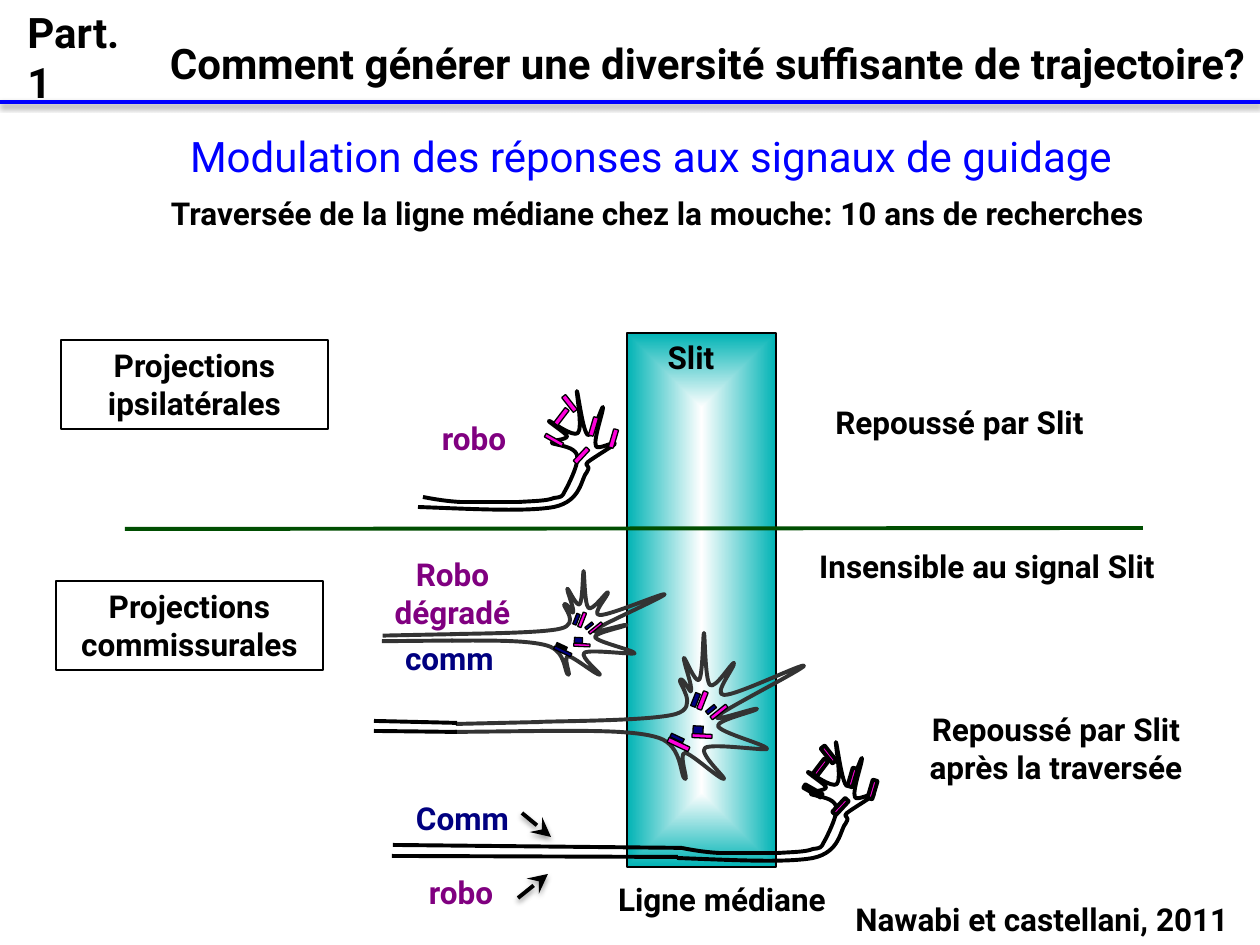
from lxml import etree
from pptx import Presentation
from pptx.dml.color import RGBColor
from pptx.enum.shapes import MSO_CONNECTOR, MSO_SHAPE
from pptx.enum.text import MSO_ANCHOR, PP_ALIGN
from pptx.oxml import parse_xml
from pptx.oxml.ns import qn
from pptx.util import Emu, Pt

RECTANGLE = MSO_SHAPE.RECTANGLE
ROUNDED = MSO_SHAPE.ROUNDED_RECTANGLE
STRAIGHT = MSO_CONNECTOR.STRAIGHT
TOP = MSO_ANCHOR.TOP
LEFT, CENTER = PP_ALIGN.LEFT, PP_ALIGN.CENTER

SCALE = 914400 / 126
FONT = "Roboto"
BLACK, GREY, BLUE, NAVY = "000000", "333333", "0000FF", "000080"
PURPLE, PINK, GREEN, TEAL = "800080", "FF00DB", "004E01", "00B3B5"

TURNING_CONE = [
    (0, 116),
    (54, 118), (108, 121), (136, 116), (164, 110), (163, 87), (169, 81),
    (174, 73), (165, 76), (170, 71), (175, 67), (195, 55), (197, 53),
    (198, 49), (179, 60), (178, 55), (175, 49), (186, 19), (185, 16),
    (184, 15), (174, 47), (170, 44), (165, 42), (160, 1), (159, 0),
    (158, 0), (165, 37), (160, 42), (155, 47), (132, 29), (131, 30),
    (129, 30), (149, 43), (149, 45), (150, 49), (132, 49), (134, 52),
    (134, 53), (150, 55), (155, 59), (159, 62), (160, 64), (159, 71),
    (158, 78), (151, 93), (147, 100), (144, 106), (144, 106), (136, 107),
    (129, 110), (116, 110), (101, 111), (84, 111), (58, 111), (42, 111),
    (25, 110), (10, 107), (5, 106),
]
TURNING_RECEPTORS = [
    (173, 26, 5, 19, 196.4), (193, 38, 5, 19, 196.4), (161, 55, 5, 19, 222.9),
    (134, 39, 4, 20, 119.4), (149, 3, 5, 19, 141.8), (141, 16, 5, 19, 217.3),
]
CROSSING_CONE = [
    (1, 98),
    (48, 98), (96, 97), (120, 105), (144, 113), (141, 144), (146, 146),
    (150, 149), (139, 120), (146, 120), (152, 120), (181, 147), (185, 146),
    (188, 146), (159, 120), (166, 115), (173, 110), (226, 118), (228, 116),
    (229, 112), (181, 100), (179, 93), (178, 87), (218, 78), (218, 76),
    (217, 74), (170, 91), (179, 83), (186, 76), (263, 37), (265, 33),
    (266, 29), (197, 63), (185, 62), (173, 62), (197, 33), (195, 30),
    (193, 29), (176, 57), (171, 52), (166, 47), (166, 1), (165, 0),
    (164, 0), (164, 43), (160, 47), (156, 50), (146, 24), (145, 25),
    (144, 28), (154, 54), (152, 58), (152, 62), (144, 43), (141, 47),
    (139, 50), (161, 74), (137, 81), (113, 88), (23, 88), (0, 89),
]
CROSSING_TAILS = [((4, 98), (-84, 99)), ((3, 89), (-83, 91))]
CROSSING_RECEPTORS = [
    ((170, 71, 4, 11), (178, 69, 4, 20), 51.1),
    ((154, 60, 5, 14), (161, 58, 5, 19), 21.4),
    ((155, 92, 8, 10), (161, 93, 4, 20), 92.7),
    ((136, 98, 4, 14), (137, 100, 5, 23), 115.1),
]


def px(value):
    return Emu(round(value * SCALE))


def rgb(color):
    return RGBColor.from_string(color)


def style_line(shape, color, width):
    shape.line.color.rgb = rgb(color)
    shape.line.width = Pt(width)


def write_text(shape, lines, color=BLACK, size=18, bold=True, align=CENTER):
    frame = shape.text_frame
    frame.word_wrap = True
    frame.vertical_anchor = TOP
    for index, line in enumerate(lines):
        paragraph = frame.add_paragraph() if index else frame.paragraphs[0]
        paragraph.alignment = align
        run = paragraph.add_run()
        run.text = line
        run.font.name = FONT
        run.font.size = Pt(size)
        run.font.bold = bold
        run.font.color.rgb = rgb(color)


def add_label(slide, box, *lines, **style):
    write_text(slide.shapes.add_textbox(*map(px, box)), lines, **style)


def add_block(shapes, kind, box, fill=None, line_width=0.75, rotation=0):
    shape = shapes.add_shape(kind, *map(px, box))
    shape.shadow.inherit = False
    shape.rotation = rotation
    style_line(shape, BLACK, line_width)
    if fill:
        shape.fill.solid()
        shape.fill.fore_color.rgb = rgb(fill)
    else:
        shape.fill.background()
    return shape


def add_line(slide, start_x, start_y, end_x, end_y, color=BLACK, width=2.25,
             arrow=False, shadow=False):
    ends = map(px, (start_x, start_y, end_x, end_y))
    connector = slide.shapes.add_connector(STRAIGHT, *ends)
    style_line(connector, color, width)
    if arrow:
        outline = connector.line._get_or_add_ln()
        etree.SubElement(outline, qn("a:tailEnd"), type="stealth",
                         w="lg", len="lg")
    properties = connector._element.spPr
    effects = etree.SubElement(properties, qn("a:effectLst"))
    if shadow:
        outer = etree.SubElement(effects, qn("a:outerShdw"), blurRad="40000",
                                 dist="20000", dir="5400000", rotWithShape="0")
        tint = etree.SubElement(outer, qn("a:srgbClr"), val=BLACK)
        etree.SubElement(tint, qn("a:alpha"), val="38000")


def add_curve(shapes, points, color):
    builder = shapes.build_freeform(*map(px, points[0]))
    builder.add_line_segments([(px(x), px(y)) for x, y in points[1:]], close=False)
    curve = builder.convert_to_shape()
    segments = list(curve._element.iter(qn("a:lnTo")))
    outline = segments[0].getparent()
    for index in range(0, len(segments), 3):
        bezier = etree.SubElement(outline, qn("a:cubicBezTo"))
        for segment in segments[index:index + 3]:
            bezier.append(segment[0])
            outline.remove(segment)
    curve.shadow.inherit = False
    curve.fill.background()
    style_line(curve, color, 2.25)


def add_axon(shapes, start, end, color):
    points = [tuple(a + (b - a) * step / 3 for a, b in zip(start, end))
              for step in range(4)]
    add_curve(shapes, points, color)


def add_turning_cone(shapes, left, top, receptor_line):
    add_curve(shapes, [(left + x, top + y) for x, y in TURNING_CONE], BLACK)
    for x, y, width, height, rotation in TURNING_RECEPTORS:
        add_block(shapes, ROUNDED, (left + x, top + y, width, height), PINK,
                  receptor_line, rotation)


def add_crossing_cone(slide, left, top, scale_x=1, scale_y=1,
                      last_colors=(NAVY, PINK)):
    def place(x, y):
        return left + x * scale_x, top + y * scale_y

    group = slide.shapes.add_group_shape()
    add_curve(group.shapes, [place(x, y) for x, y in CROSSING_CONE], GREY)
    for start, end in CROSSING_TAILS:
        add_axon(group.shapes, place(*start), place(*end), GREY)
    colors = [(NAVY, PINK)] * 3 + [last_colors]
    for (comm, robo, rotation), fills in zip(CROSSING_RECEPTORS, colors):
        for kind, box, fill in zip((RECTANGLE, ROUNDED), (comm, robo), fills):
            x, y, width, height = box
            add_block(slide.shapes, kind,
                      (*place(x, y), width * scale_y, height * scale_x),
                      fill, rotation=rotation)


def add_midline(slide):
    band = add_block(slide.shapes, RECTANGLE, (627, 333, 149, 534))
    gradient = parse_xml(
        '<a:gradFill xmlns:a="http://schemas.openxmlformats.org/drawingml/2006/main"'
        ' rotWithShape="1"><a:gsLst>'
        '<a:gs pos="0"><a:srgbClr val="FFFFFF"/></a:gs>'
        f'<a:gs pos="100000"><a:srgbClr val="{TEAL}"/></a:gs></a:gsLst>'
        '<a:path path="shape"><a:fillToRect l="50000" t="50000" r="50000"'
        ' b="50000"/></a:path></a:gradFill>')
    properties = band._element.spPr
    properties.replace(properties.find(qn("a:noFill")), gradient)


def add_header(slide):
    title = slide.shapes.title
    title.left, title.top, title.width, title.height = map(px, (155, 31, 1105, 64))
    write_text(title, ["Comment générer une diversité suffisante de trajectoire?"],
               size=24)
    add_label(slide, (15, 0, 140, 64), "Part. 1", size=24, align=LEFT)
    add_line(slide, 0, 102, 1260, 102, BLUE, 2, shadow=True)
    add_label(slide, (142, 124, 1018, 63),
              "Modulation des réponses aux signaux de guidage",
              color=BLUE, size=24, bold=False)
    add_label(slide, (155, 188, 1005, 50),
              "Traversée de la ligne médiane chez la mouche: 10 ans de recherches")


def main():
    presentation = Presentation()
    presentation.slide_width, presentation.slide_height = px(1260), px(945)
    slide = presentation.slides.add_slide(presentation.slide_layouts[5])
    add_header(slide)
    add_midline(slide)
    add_crossing_cone(slide, 539, 633)
    add_turning_cone(slide.shapes, 418, 391, 0.75)
    add_turning_cone(slide.shapes.add_group_shape().shapes, 677, 742, 2.25)
    add_crossing_cone(slide, 450, 571, 0.81, 0.71, (BLACK, NAVY))
    add_axon(slide.shapes, (682, 848), (393, 845), BLACK)
    add_axon(slide.shapes, (678, 857), (392, 856), BLACK)
    axon = slide.shapes.add_group_shape().shapes
    add_axon(axon, (457, 723), (374, 721), BLACK)
    add_axon(axon, (457, 732), (374, 731), BLACK)
    add_line(slide, 1143, 528, 125, 529, GREEN)
    for arrow in ((522, 813, 551, 837), (518, 898, 548, 874)):
        add_line(slide, *arrow, arrow=True, shadow=True)
    for box, text in (((61, 340, 267, 89), "Projections ipsilatérales"),
                      ((56, 581, 267, 89), "Projections commissurales")):
        write_text(add_block(slide.shapes, RECTANGLE, box), [text])
    for box, text, color in (
            ((602, 874, 240, 50), "Ligne médiane", BLACK),
            ((641, 332, 100, 50), "Slit", BLACK),
            ((392, 633, 115, 50), "comm", NAVY),
            ((422, 413, 104, 50), "robo", PURPLE),
            ((776, 397, 367, 50), "Repoussé par Slit", BLACK),
            ((802, 541, 370, 50), "Insensible au signal Slit", BLACK),
            ((887, 704, 338, 89), "Repoussé par Slit après la traversée", BLACK),
            ((337, 793, 251, 50), "Comm", NAVY),
            ((409, 867, 104, 50), "robo", PURPLE),
            ((827, 894, 430, 50), "Nawabi et castellani, 2011", BLACK)):
        add_label(slide, box, text, color=color)
    add_label(slide, (372, 549, 161, 89), "Robo", "dégradé", color=PURPLE)
    presentation.save("out.pptx")


if __name__ == "__main__":
    main()
